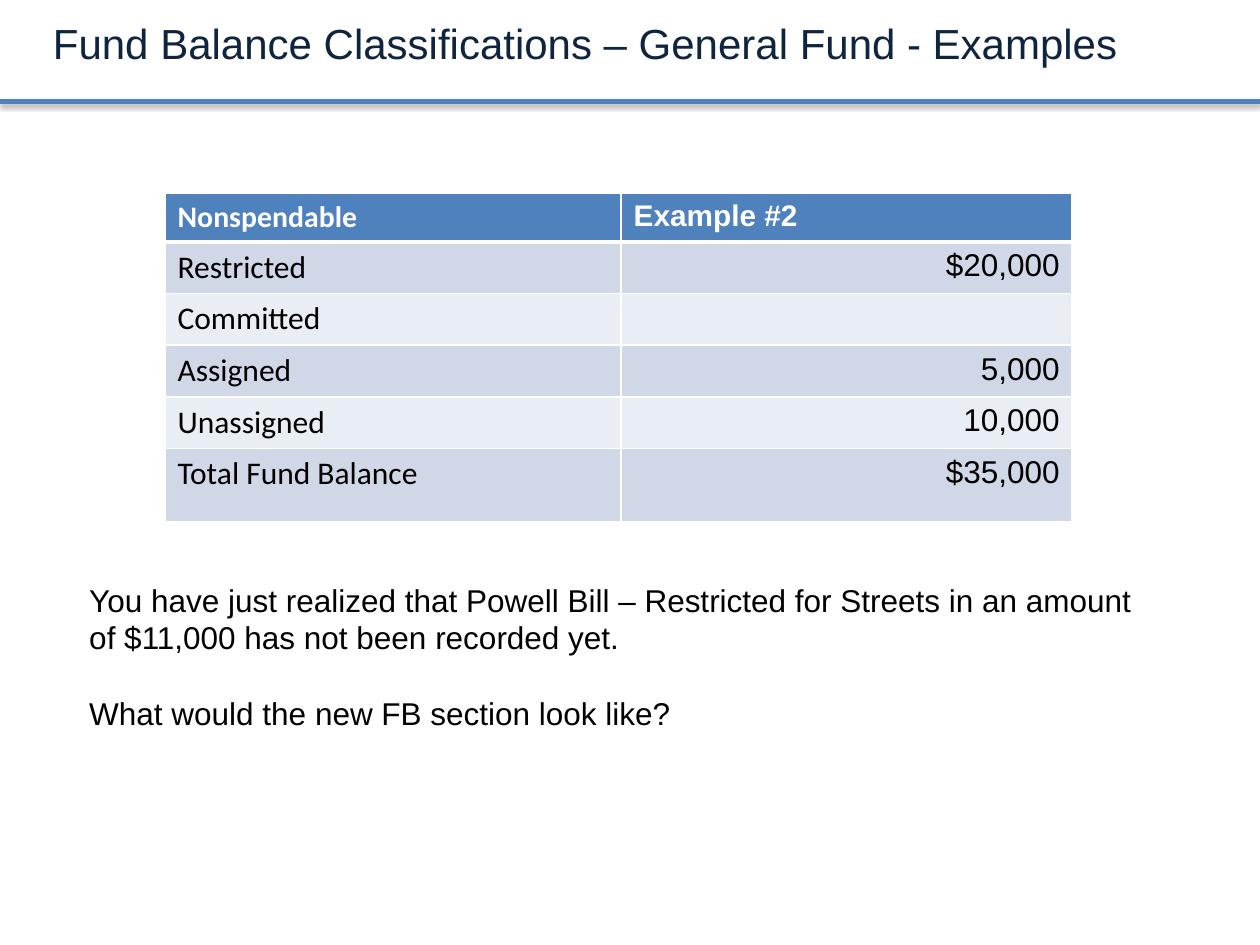
from lxml.etree import SubElement
from pptx import Presentation
from pptx.dml.color import RGBColor
from pptx.enum.shapes import MSO_CONNECTOR
from pptx.enum.text import MSO_ANCHOR, MSO_AUTO_SIZE, PP_ALIGN
from pptx.oxml.ns import qn
from pptx.util import Inches, Pt

WIDE, HIGH = 10, 7.5
ROWS = [
    ("Nonspendable", "Example #2"),
    ("Restricted", "$20,000"),
    ("Committed", ""),
    ("Assigned", "5,000"),
    ("Unassigned", "10,000"),
    ("Total Fund Balance", "$35,000"),
]
NOTES = [
    "You have just realized that Powell Bill – Restricted for Streets in an "
    "amount of $11,000 has not been recorded yet.",
    "What would the new FB section look like?",
]


def paint(part, tone):
    """Set a font, fill or line colour from a hex string."""
    if hasattr(part, "solid"):
        part.solid()
        part = part.fore_color
    else:
        part = part.color
    part.rgb = RGBColor.from_string(tone)


def style(para, size, tone="000000", face="Arial", bold=False):
    """Format the runs of one paragraph."""
    para.font.size = Pt(size)
    for run in para.runs:
        run.font.size, run.font.name, run.font.bold = Pt(size), face, bold
        paint(run.font, tone)


def border(cell, top, base):
    """Draw white borders around a cell, with top and base widths in points."""
    props = cell._tc.get_or_add_tcPr()
    for side, width in zip("LRTB", (1, 1, top, base)):
        line = SubElement(props, qn(f"a:ln{side}"), w=str(Pt(width)))
        fill = SubElement(line, qn("a:solidFill"))
        SubElement(fill, qn("a:srgbClr"), val="FFFFFF")


def add_title(slide, box):
    """Place the slide title in its box."""
    title = slide.shapes.title
    title.left, title.top, title.width, title.height = box
    frame = title.text_frame
    frame.text = "Fund Balance Classifications – General Fund - Examples"
    frame.auto_size = MSO_AUTO_SIZE.NONE
    frame.vertical_anchor = MSO_ANCHOR.TOP
    frame.paragraphs[0].alignment = PP_ALIGN.LEFT
    style(frame.paragraphs[0], 24, "0F243E")


def add_rule(slide, box):
    """Draw the shadowed rule under the title."""
    left, top, width, height = box
    rule = slide.shapes.add_connector(
        MSO_CONNECTOR.STRAIGHT, left, top, left + width, top + height)
    paint(rule.line, "4F81BD")
    rule.line.width = Pt(2.75)
    effects = SubElement(rule._element.spPr, qn("a:effectLst"))
    shade = SubElement(effects, qn("a:outerShdw"), blurRad=str(Pt(3.1)),
                       dist=str(Pt(1.6)), dir="5400000", rotWithShape="0")
    tone = SubElement(shade, qn("a:srgbClr"), val="000000")
    SubElement(tone, qn("a:alpha"), val="38000")


def add_funds(slide, box):
    """Fill the fund balance table."""
    table = slide.shapes.add_table(len(ROWS), 2, *box).table
    table.columns[0].width = Inches(3.62)
    table.columns[1].width = box[2] - Inches(3.62)
    heights = [0.39] + [0.41] * 4 + [0.58]
    for r, (texts, height) in enumerate(zip(ROWS, heights)):
        table.rows[r].height = Inches(height)
        head = r == 0
        tone = "4F81BD" if head else ("E9EDF4", "D0D8E8")[r % 2]
        for c, text in enumerate(texts):
            cell = table.cell(r, c)
            cell.text = text
            border(cell, 3 if r == 1 else 1, 3 if head else 1)
            paint(cell.fill, tone)
            para = cell.text_frame.paragraphs[0]
            if c and not head:
                para.alignment = PP_ALIGN.RIGHT
            style(para, 17 if head else 18, "FFFFFF" if head else "000000",
                  ("Calibri", "Arial")[c], head)


def add_notes(slide, box):
    """Write the case and its question below the table."""
    frame = slide.shapes.add_textbox(*box).text_frame
    frame.word_wrap = True
    frame.text = "\n".join(NOTES)
    for para in frame.paragraphs:
        style(para, 18)
    frame.paragraphs[1].space_before = Pt(21.6)


def share(left, top, width, height):
    """Turn shares of the slide's size into a box."""
    return (Inches(left * WIDE), Inches(top * HIGH),
            Inches(width * WIDE), Inches(height * HIGH))


def main():
    """Build and save the slide."""
    deck = Presentation()
    deck.slide_width, deck.slide_height = Inches(WIDE), Inches(HIGH)
    slide = deck.slides.add_slide(deck.slide_layouts[5])
    add_rule(slide, share(0, 0.107, 1, 0))
    add_funds(slide, share(0.131, 0.204, 0.72, 0.347))
    add_notes(slide, share(0.061, 0.608, 0.852, 0.175))
    add_title(slide, share(0.032, 0.012, 0.942, 0.067))
    deck.save("out.pptx")


if __name__ == "__main__":
    main()
